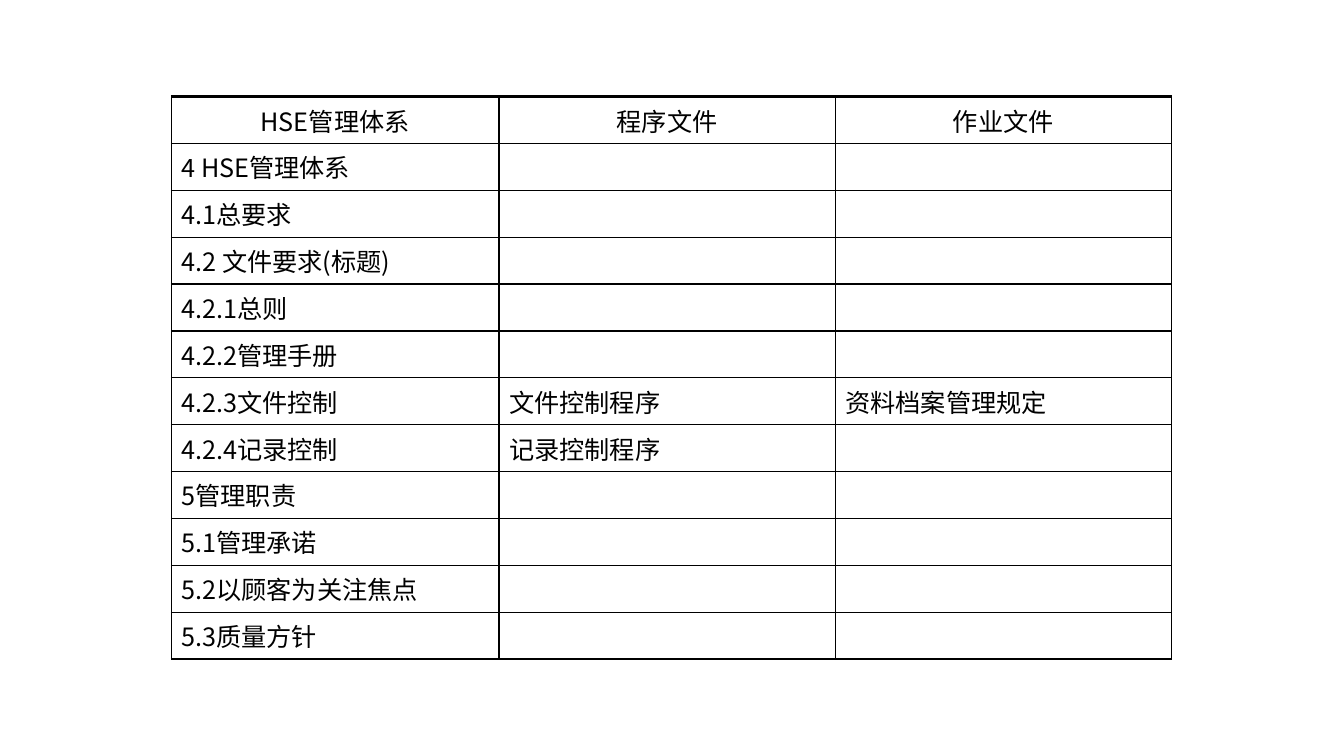
from pptx import Presentation
from pptx.dml.color import RGBColor
from pptx.enum.text import MSO_ANCHOR, PP_ALIGN
from pptx.oxml.ns import qn
from pptx.oxml.xmlchemy import OxmlElement
from pptx.util import Pt

CENTER, LEFT = PP_ALIGN.CENTER, PP_ALIGN.LEFT
MIDDLE = MSO_ANCHOR.MIDDLE

HEADINGS = ["HSE管理体系", "程序文件", "作业文件"]
CLAUSES = [
    ["4 HSE管理体系"],
    ["4.1总要求"],
    ["4.2 文件要求(标题)"],
    ["4.2.1总则"],
    ["4.2.2管理手册"],
    ["4.2.3文件控制", "文件控制程序", "资料档案管理规定"],
    ["4.2.4记录控制", "记录控制程序"],
    ["5管理职责"],
    ["5.1管理承诺"],
    ["5.2以顾客为关注焦点"],
    ["5.3质量方针"],
]


def rgb(value):
    return RGBColor.from_string(value)


class SlideBuilder:
    font = "Noto Sans CJK SC"
    size = 18
    ink = "000000"
    hanging = 27

    def __init__(self, slide):
        self.slide = slide

    def table(self, left, top, widths, row_height, rows):
        grid = self.slide.shapes.add_table(
            len(rows), len(widths), Pt(left), Pt(top),
            Pt(sum(widths)), Pt(row_height * len(rows))).table
        grid.first_row = grid.horz_banding = False
        for column, width in zip(grid.columns, widths):
            column.width = Pt(width)
        for r, texts in enumerate(rows):
            grid.rows[r].height = Pt(row_height)
            for c in range(len(widths)):
                text = texts[c] if c < len(texts) else ""
                self.cell(grid.cell(r, c), text, heading=r == 0)

    def cell(self, cell, text, heading):
        for side in ("L", "R", "T", "B"):
            self.border(cell, side, 2 if heading and side == "T" else 1)
        cell.fill.background()
        cell.vertical_anchor = MIDDLE
        cell.text = text
        clause = cell.text_frame.paragraphs[0]
        clause.alignment = CENTER if heading else LEFT
        properties = clause._p.get_or_add_pPr()
        properties.set("marL", str(Pt(self.hanging)))
        properties.set("indent", str(-Pt(self.hanging)))
        clause.font.size = Pt(self.size)
        clause.font.color.rgb = rgb(self.ink)
        clause.font.name = self.font
        # East Asian typeface
        east_asian = OxmlElement("a:ea")
        east_asian.set("typeface", self.font)
        properties.find(qn("a:defRPr")).append(east_asian)

    def border(self, cell, side, width):
        line = OxmlElement(f"a:ln{side}")
        line.set("w", str(Pt(width)))
        fill = OxmlElement("a:solidFill")
        color = OxmlElement("a:srgbClr")
        color.set("val", self.ink)
        fill.append(color)
        line.append(fill)
        cell._tc.get_or_add_tcPr().append(line)


def main():
    deck = Presentation()
    deck.slide_width, deck.slide_height = Pt(960), Pt(540)
    builder = SlideBuilder(deck.slides.add_slide(deck.slide_layouts[6]))

    # Management system clauses and their documents
    builder.table(122.4, 69, [234, 240.2, 240.2], 33.5, [HEADINGS] + CLAUSES)

    deck.save("out.pptx")


if __name__ == "__main__":
    main()
